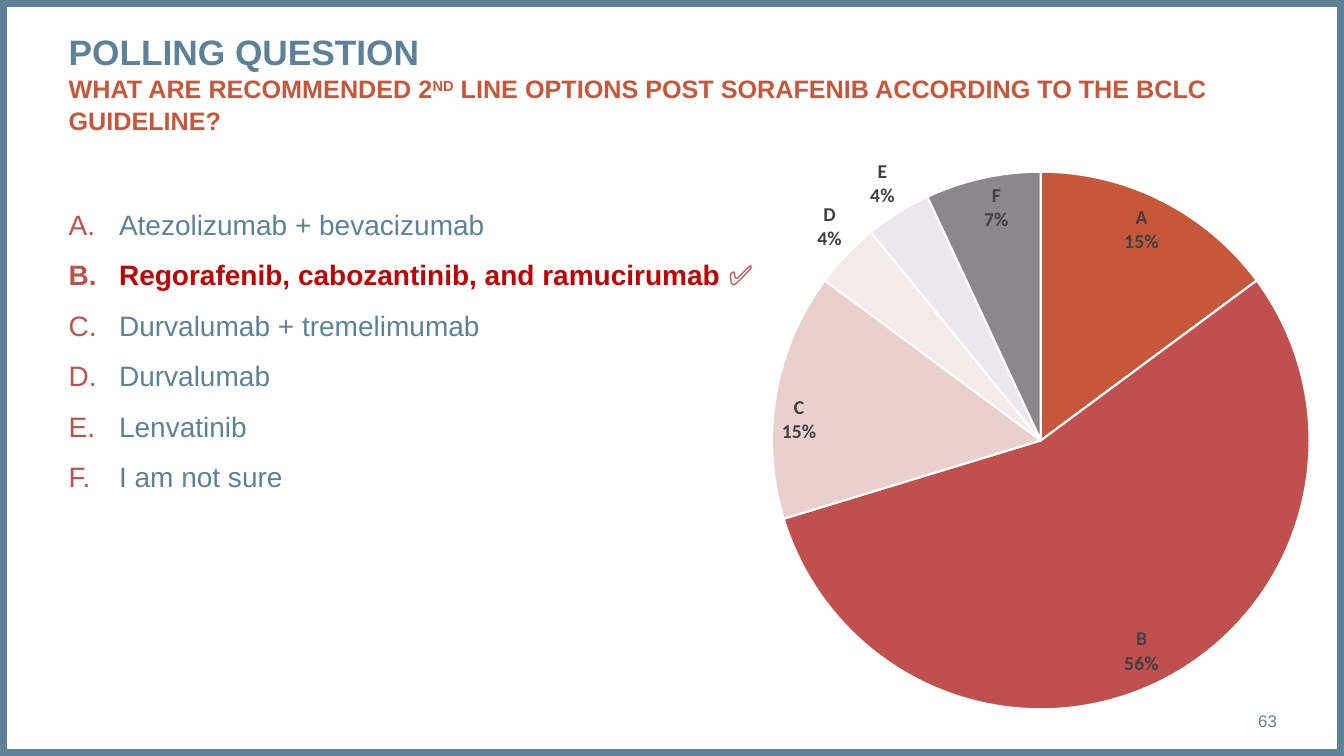
from copy import deepcopy
from dataclasses import dataclass

from lxml import etree
from pptx import Presentation
from pptx.chart.data import CategoryChartData
from pptx.dml.color import RGBColor
from pptx.enum.chart import XL_CHART_TYPE, XL_LABEL_POSITION
from pptx.enum.shapes import MSO_SHAPE
from pptx.enum.text import MSO_ANCHOR, MSO_AUTO_SIZE, PP_ALIGN
from pptx.oxml.ns import qn
from pptx.util import Cm, Pt

PIE = XL_CHART_TYPE.PIE
INSIDE_END = XL_LABEL_POSITION.INSIDE_END
RECTANGLE = MSO_SHAPE.RECTANGLE
TOP, MIDDLE = MSO_ANCHOR.TOP, MSO_ANCHOR.MIDDLE
LEFT, RIGHT = PP_ALIGN.LEFT, PP_ALIGN.RIGHT
NO_AUTOFIT = MSO_AUTO_SIZE.NONE


@dataclass(frozen=True)
class Theme:
    font: str = "Arial"
    chart_font: str = "Calibri"
    slate: str = "5D8298"
    rust: str = "C6573B"
    marker: str = "C0504D"
    correct: str = "C00000"
    label: str = "404040"
    white: str = "FFFFFF"
    slices: tuple = ("C6573B", "C0504D", "E9D0CD", "F4EAE7", "ECE6ED", "8B878B")
    title_size: float = 25.2
    question_size: float = 18
    answer_size: float = 20
    label_size: float = 14
    number_size: float = 12


THEME = Theme()
SLIDE_WIDTH, SLIDE_HEIGHT = Cm(33.87), Cm(19.05)
MARGIN, CONTENT_WIDTH = Cm(1.73), Cm(30.45)
HANGING = Cm(1.27)
CORRECT = 1
ANSWERS = [
    "Atezolizumab + bevacizumab",
    "Regorafenib, cabozantinib, and ramucirumab ",
    "Durvalumab + tremelimumab",
    "Durvalumab",
    "Lenvatinib",
    "I am not sure",
]
VOTES = {"A": 15, "B": 56, "C": 15, "D": 4, "E": 4, "F": 7}
NARROW_SLICES = (3, 4)
PIE_LAYOUT = {"x": 0.2, "y": 0.08, "w": 0.6, "h": 0.9}


def rgb(colour):
    return RGBColor.from_string(colour)


def style(font, size, colour, bold=False, name=THEME.font):
    font.name = name
    font.size = Pt(size)
    font.bold = bold
    font.color.rgb = rgb(colour)


def place(shape, left, top, width, height):
    shape.left, shape.top, shape.width, shape.height = left, top, width, height


def prepare_frame(frame, anchor):
    frame.word_wrap = True
    frame.auto_size = NO_AUTOFIT
    frame.vertical_anchor = anchor
    frame.margin_left = frame.margin_right = 0
    frame.margin_top = frame.margin_bottom = 0


def add_border(slide):
    border = slide.shapes.add_shape(RECTANGLE, 0, 0, SLIDE_WIDTH, SLIDE_HEIGHT)
    border.shadow.inherit = False
    border.fill.background()
    border.line.color.rgb = rgb(THEME.slate)
    border.line.width = Pt(10)
    slide.shapes._spTree.insert(2, border._element)


def add_run(paragraph, text, size, colour, bold=False):
    run = paragraph.add_run()
    run.text = text
    style(run.font, size, colour, bold)
    return run


def fill_title(title):
    place(title, MARGIN, Cm(0.71), CONTENT_WIDTH, Cm(2.39))
    prepare_frame(title.text_frame, TOP)
    heading = title.text_frame.paragraphs[0]
    heading.alignment = LEFT
    heading.line_spacing = 1.04
    add_run(heading, "POLLING QUESTION", THEME.title_size, THEME.slate, True)
    heading.add_line_break()
    question = (
        ("WHAT ARE RECOMMENDED 2", 0),
        ("ND", 30000),
        (" LINE OPTIONS POST SORAFENIB ACCORDING TO THE BCLC GUIDELINE?", 0),
    )
    for text, baseline in question:
        run = add_run(heading, text, THEME.question_size, THEME.rust, True)
        if baseline:
            run._r.get_or_add_rPr().set("baseline", str(baseline))


def add_letter(paragraph):
    properties = paragraph._p.get_or_add_pPr()
    properties.set("marL", str(HANGING))
    properties.set("indent", str(-HANGING))
    marker = etree.SubElement(properties, qn("a:buClr"))
    etree.SubElement(marker, qn("a:srgbClr"), val=THEME.marker)
    etree.SubElement(properties, qn("a:buFont"), typeface=THEME.font)
    etree.SubElement(properties, qn("a:buAutoNum"), type="alphaUcPeriod")


def fill_answers(body):
    place(body, MARGIN, Cm(5.23), CONTENT_WIDTH, Cm(11.3))
    frame = body.text_frame
    prepare_frame(frame, TOP)
    for index, answer in enumerate(ANSWERS):
        paragraph = frame.add_paragraph() if index else frame.paragraphs[0]
        add_letter(paragraph)
        paragraph.alignment = LEFT
        paragraph.line_spacing = Pt(24)
        paragraph.space_before = Pt(12 if index else 0)
        paragraph.space_after = Pt(0)
        if index == CORRECT:
            add_run(paragraph, answer, THEME.answer_size, THEME.correct, True)
            add_run(paragraph, "✅", THEME.answer_size, THEME.marker)
        else:
            paragraph.add_run().text = answer
            style(paragraph.font, THEME.answer_size, THEME.slate)


def add_slide_number(slide, number):
    box = slide.shapes.add_textbox(Cm(29.21), Cm(17.65), Cm(2.97), Cm(1.02))
    prepare_frame(box.text_frame, MIDDLE)
    paragraph = box.text_frame.paragraphs[0]
    paragraph.text = number
    paragraph.alignment = RIGHT
    style(paragraph.font, THEME.number_size, THEME.slate)


def set_pie_layout(chart):
    plot_area = chart._chartSpace.chart.plotArea
    for automatic in plot_area.findall(qn("c:layout")):
        plot_area.remove(automatic)
    layout = etree.Element(qn("c:layout"))
    manual = etree.SubElement(layout, qn("c:manualLayout"))
    etree.SubElement(manual, qn("c:layoutTarget"), val="inner")
    for axis in "xy":
        etree.SubElement(manual, qn(f"c:{axis}Mode"), val="edge")
    for side, share in PIE_LAYOUT.items():
        etree.SubElement(manual, qn(f"c:{side}"), val=str(share))
    plot_area.insert(0, layout)


def label_slices(series):
    labels = series.data_labels
    style(labels.font, THEME.label_size, THEME.label, True, THEME.chart_font)
    labels.number_format = '0"%"'
    labels.number_format_is_linked = False
    labels.show_value = True
    labels.show_category_name = True
    labels.position = INSIDE_END
    shared = labels._element
    separator = etree.Element(qn("c:separator"))
    separator.text = "\n"
    shared.find(qn("c:showBubbleSize")).addnext(separator)
    settings = [part for part in shared if part.tag != qn("c:showLeaderLines")]
    for order, index in enumerate(NARROW_SLICES):
        outside = etree.Element(qn("c:dLbl"))
        etree.SubElement(outside, qn("c:idx"), val=str(index))
        outside.extend([deepcopy(part) for part in settings])
        outside.find(qn("c:dLblPos")).set("val", "outEnd")
        shared.insert(order, outside)


def add_votes_pie(slide):
    votes = CategoryChartData()
    votes.categories = list(VOTES)
    votes.add_series("Series 1", list(VOTES.values()))
    chart = slide.shapes.add_chart(
        PIE, Cm(14.94), Cm(3.12), Cm(22.58), Cm(15.06), votes
    ).chart
    chart.has_title = False
    chart.has_legend = False
    chart.font.name = THEME.chart_font
    chart.font.size = Pt(10)
    chart.plots[0].vary_by_categories = True
    series = chart.plots[0].series[0]
    for index, colour in enumerate(THEME.slices):
        slice_format = series.points[index].format
        slice_format.fill.solid()
        slice_format.fill.fore_color.rgb = rgb(colour)
        slice_format.line.color.rgb = rgb(THEME.white)
        slice_format.line.width = Pt(1.5)
    label_slices(series)
    set_pie_layout(chart)


def main():
    deck = Presentation()
    deck.slide_width, deck.slide_height = SLIDE_WIDTH, SLIDE_HEIGHT
    slide = deck.slides.add_slide(deck.slide_layouts[1])
    add_border(slide)
    fill_title(slide.shapes.title)
    fill_answers(slide.placeholders[1])
    add_slide_number(slide, "63")
    add_votes_pie(slide)
    deck.save("out.pptx")


if __name__ == "__main__":
    main()
